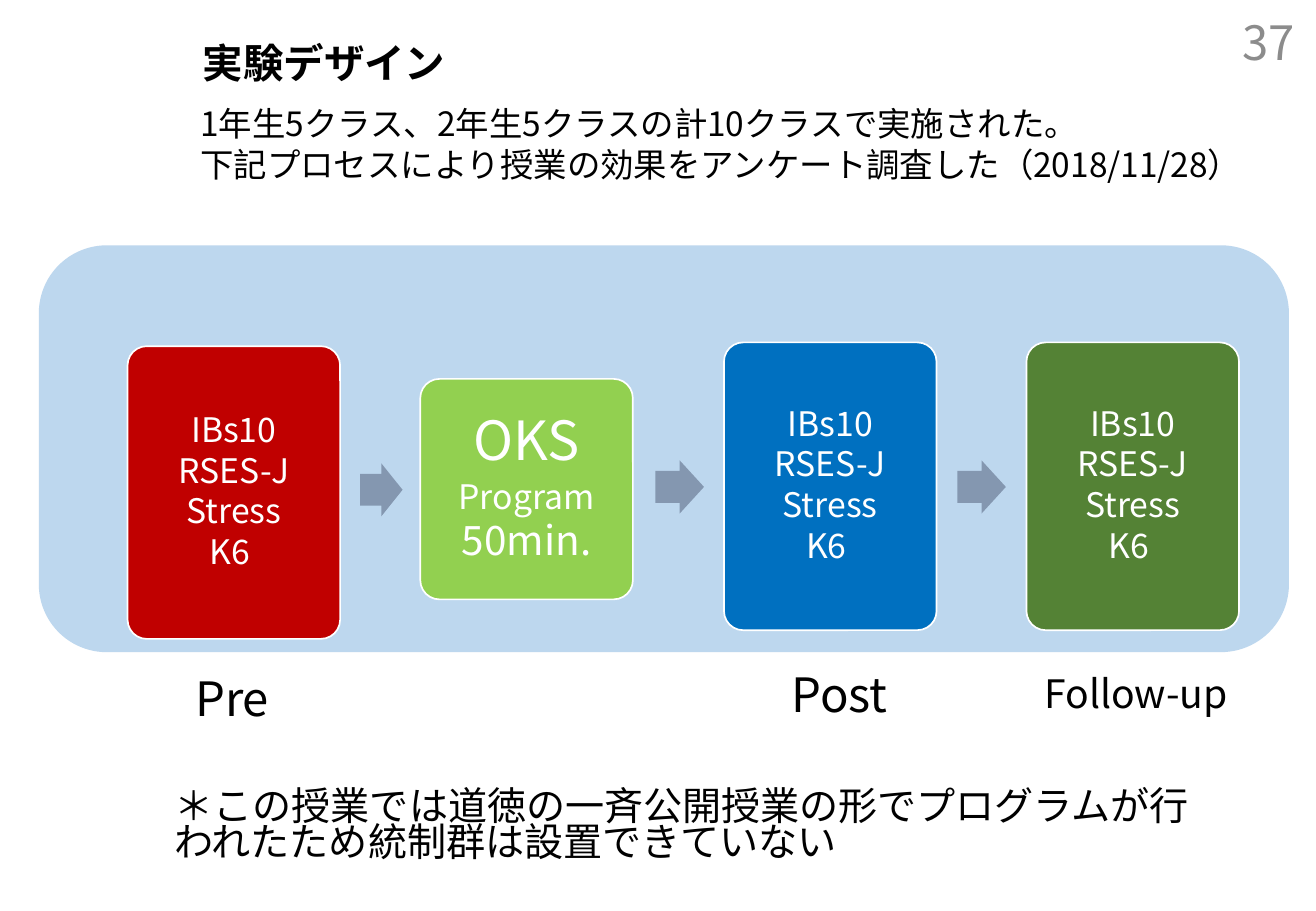
import pptx
import pptx.util
import pptx.dml.color
import pptx.enum.shapes
import pptx.enum.text
import pptx.oxml.ns
import lxml.etree

Pt = pptx.util.Pt
RGBColor = pptx.dml.color.RGBColor
SHAPE = pptx.enum.shapes.MSO_SHAPE
ALIGN = pptx.enum.text.PP_ALIGN
ANCHOR = pptx.enum.text.MSO_ANCHOR

FONT = "Noto Sans CJK JP"
BLACK = RGBColor(0x00, 0x00, 0x00)
WHITE = RGBColor(0xFF, 0xFF, 0xFF)
GRAY = RGBColor(0x8C, 0x8C, 0x8C)
PANEL = RGBColor(0xBD, 0xD7, 0xEE)
ARROW = RGBColor(0x84, 0x97, 0xB0)
RED = RGBColor(0xC0, 0x00, 0x00)
LIME = RGBColor(0x92, 0xD0, 0x50)
BLUE = RGBColor(0x00, 0x70, 0xC0)
GREEN = RGBColor(0x54, 0x82, 0x35)

CARD_WIDTH = 126
SCALES = [("IBs10", 20, 2.5), ("RSES-J", 20, 2.5), ("Stress", 20, 2.5), ("K6 ", 20, 2.5)]
PROGRAM = [("OKS", 32, 4.5), ("Program", 20, 2.5), ("50min.", 24, 2.5)]


def set_all(target, values):
    for name, value in values.items():
        setattr(target, name, value)


def write(p, text, size, color, bold=False, **layout):
    """Fill a paragraph with one run, in the same font for Latin and Japanese."""
    set_all(p, {"line_spacing": 0.9, **layout})
    r = p.add_run()
    r.text = text
    set_all(r.font, {"name": FONT, "size": Pt(size), "bold": bold})
    r.font.color.rgb = color
    ea = lxml.etree.SubElement(r.font._element, pptx.oxml.ns.qn("a:ea"))
    ea.set("typeface", FONT)


def paragraphs(tf, count):
    return [tf.paragraphs[0]] + [tf.add_paragraph() for _ in range(count - 1)]


def add_text(s, box, lines, size, color=BLACK, anchor=ANCHOR.TOP, gap=0, **style):
    tf = s.shapes.add_textbox(*map(Pt, box)).text_frame
    set_all(tf, {"word_wrap": True, "vertical_anchor": anchor})
    for i, (p, line) in enumerate(zip(paragraphs(tf, len(lines)), lines)):
        write(p, line, size, color, space_before=Pt(gap if i else 0), **style)


def add_block(s, kind, box, fill, adjustments):
    sp = s.shapes.add_shape(kind, *map(Pt, box))
    sp.shadow.inherit = False
    sp.fill.solid()
    sp.fill.fore_color.rgb = fill
    sp.line.fill.background()
    for i, value in enumerate(adjustments):
        sp.adjustments[i] = value
    return sp


def add_card(s, left, top, height, fill, lines, inset):
    sp = add_block(s, SHAPE.ROUNDED_RECTANGLE, (left, top, CARD_WIDTH, height), fill, [0.09])
    sp.line.color.rgb = WHITE
    sp.line.width = Pt(1)
    tf = sp.text_frame
    set_all(tf, {"word_wrap": True, "vertical_anchor": ANCHOR.MIDDLE})
    set_all(tf, {f"margin_{side}": Pt(inset) for side in ("left", "top", "right", "bottom")})
    for p, (text, size, after) in zip(paragraphs(tf, len(lines)), lines):
        write(p, text, size, WHITE, alignment=ALIGN.CENTER, space_after=Pt(after))


def add_arrow(s, left, top, width):
    add_block(s, SHAPE.RIGHT_ARROW, (left, top, width, 31.5), ARROW, [0.6, 0.5])


def add_heading(s):
    add_text(s, (113, 14.4, 621, 46.8), ["実験デザイン"], 24,
             anchor=ANCHOR.MIDDLE, bold=True, line_spacing=Pt(27))
    add_text(s, (605.5, 7.9, 169.2, 37.4), ["37"], 28, GRAY,
             anchor=ANCHOR.MIDDLE, alignment=ALIGN.RIGHT)
    add_text(s, (111.6, 60.5, 663, 75), [
        "1年生5クラス、2年生5クラスの計10クラスで実施された。",
        "下記プロセスにより授業の効果をアンケート調査した（2018/11/28）",
    ], 19.8, gap=2.4)


def add_process(s):
    add_block(s, SHAPE.ROUNDED_RECTANGLE, (23, 145.4, 741, 241.2), PANEL, [0.167])
    add_card(s, 75.6, 205.2, 173.5, RED, SCALES, 9.4)
    add_card(s, 249.1, 224.6, 130.7, LIME, PROGRAM, 13)
    add_card(s, 429.1, 203, 170.6, BLUE, SCALES, 9.4)
    add_card(s, 608.4, 203, 170.6, GREEN, SCALES, 9.4)
    for left, top, width in [(213.4, 274.6, 25.2), (388.5, 272.9, 28.8), (567.4, 272.9, 28.8)]:
        add_arrow(s, left, top, width)


def add_captions(s):
    add_text(s, (108.7, 396.7, 69, 50), ["Pre"], 28)
    add_text(s, (462.2, 394.5, 162, 50), ["Post"], 28)
    add_text(s, (612, 396.2, 162, 50), ["Follow-up"], 23.2)
    add_text(s, (96.5, 465.8, 620.6, 65), [
        "＊この授業では道徳の一斉公開授業の形でプログラムが行われたため統制群は設置できていない",
    ], 23.2, line_spacing=0.76)


def main():
    prs = pptx.Presentation()
    set_all(prs, {"slide_width": Pt(780), "slide_height": Pt(540)})
    s = prs.slides.add_slide(prs.slide_layouts[6])
    add_heading(s)
    add_process(s)
    add_captions(s)
    prs.save("out.pptx")


if __name__ == "__main__":
    main()
